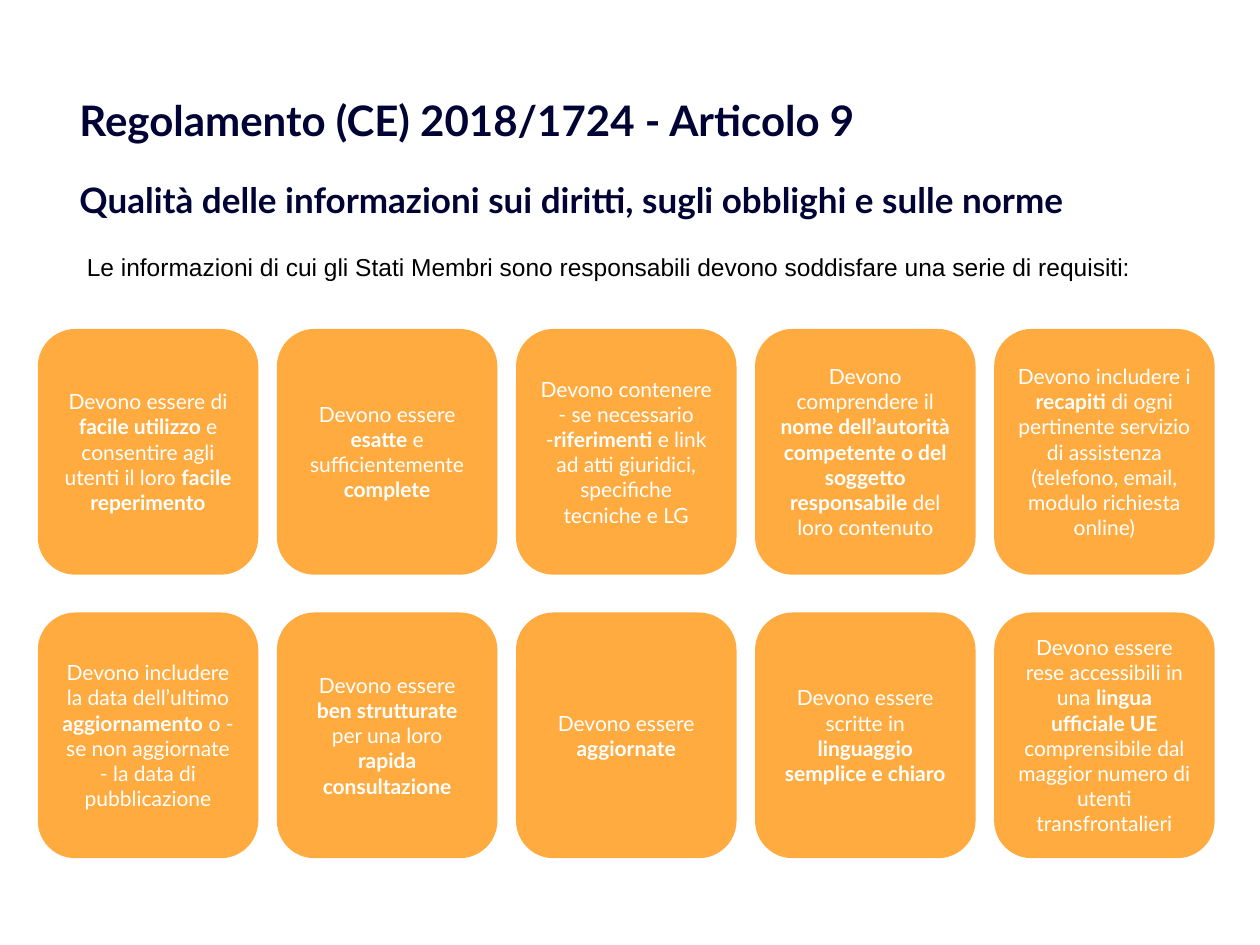
import pptx
import pptx.dml.color
import pptx.enum.shapes
import pptx.enum.text
import pptx.util

Pt = pptx.util.Pt
RGBColor = pptx.dml.color.RGBColor
PP_ALIGN = pptx.enum.text.PP_ALIGN
MSO_ANCHOR = pptx.enum.text.MSO_ANCHOR

NAVY = RGBColor(0x01, 0x03, 0x35)
BLACK = RGBColor(0x00, 0x00, 0x00)
WHITE = RGBColor(0xFF, 0xFF, 0xFF)
ORANGE = RGBColor(0xFF, 0xAB, 0x40)

TITLE = "Regolamento (CE) 2018/1724 - Articolo 9"
SUBTITLE = "Qualità delle informazioni sui diritti, sugli obblighi e sulle norme"
INTRO = (
    "Le informazioni di cui gli Stati Membri sono responsabili "
    "devono soddisfare una serie di requisiti:"
)
REQUIREMENTS = [
    [
        ["Devono essere di ", "facile utilizzo ", "e consentire agli utenti il loro ",
         "facile reperimento"],
        ["Devono essere ", "esatte", " e sufficientemente ", "complete"],
        ["Devono contenere - se necessario -", "riferimenti",
         " e link ad atti giuridici, specifiche tecniche e LG"],
        ["Devono comprendere il ",
         "nome dell’autorità competente o del soggetto responsabile ",
         "del loro contenuto"],
        ["Devono includere i ", "recapiti",
         " di ogni pertinente servizio di assistenza "
         "(telefono, email, modulo richiesta online)"],
    ],
    [
        ["Devono includere la data dell’ultimo ", "aggiornamento",
         " o - se non aggiornate - la data di pubblicazione"],
        ["Devono essere ", "ben strutturate", " per una loro ", "rapida consultazione"],
        ["Devono essere ", "aggiornate"],
        ["Devono essere scritte in ", "linguaggio semplice e chiaro"],
        ["Devono essere rese accessibili in una ", "lingua ufficiale UE ",
         "comprensibile dal maggior numero di utenti transfrontalieri"],
    ],
]


def format_run(r, font, size, color, bold):
    """Set the font of one run."""
    r.font.name = font
    r.font.size = Pt(size)
    r.font.color.rgb = color
    r.font.bold = bold


def set_frame(tf, anchor, inset_x, inset_y):
    """Set wrapping, anchor and insets of a text frame."""
    tf.word_wrap = True
    tf.vertical_anchor = anchor
    tf.margin_left = tf.margin_right = Pt(inset_x)
    tf.margin_top = tf.margin_bottom = Pt(inset_y)


def add_heading(s, box, text, size):
    """Place a bold navy heading in the box."""
    tf = s.shapes.add_textbox(*map(Pt, box)).text_frame
    set_frame(tf, MSO_ANCHOR.MIDDLE, 2.88, 2.88)
    tf.text = text
    format_run(tf.paragraphs[0].runs[0], "Lato", size, NAVY, True)


def add_intro(s, box):
    """Place the introductory sentence in the box."""
    tf = s.shapes.add_textbox(*map(Pt, box)).text_frame
    set_frame(tf, MSO_ANCHOR.TOP, 7.2, 3.6)
    tf.text = INTRO
    format_run(tf.paragraphs[0].runs[0], "Arial", 14, BLACK, False)


def add_card(s, box, parts):
    """Place a rounded card whose text parts alternate regular and bold."""
    sp = s.shapes.add_shape(
        pptx.enum.shapes.MSO_SHAPE.ROUNDED_RECTANGLE, *map(Pt, box))
    sp.adjustments[0] = 0.17
    sp.shadow.inherit = False
    sp.fill.solid()
    sp.fill.fore_color.rgb = ORANGE
    sp.line.fill.background()
    set_frame(sp.text_frame, MSO_ANCHOR.MIDDLE, 7.2, 3.6)
    p = sp.text_frame.paragraphs[0]
    p.alignment = PP_ALIGN.CENTER
    for i, part in enumerate(parts):
        r = p.add_run()
        r.text = part
        format_run(r, "Lato", 12, WHITE, i % 2 == 1)


def add_card_grid(s, box, card_width, card_height):
    """Spread the requirement cards evenly over the box."""
    left, top, width, height = box
    step_x = (width - card_width) / (len(REQUIREMENTS[0]) - 1)
    step_y = (height - card_height) / (len(REQUIREMENTS) - 1)
    for i, row in enumerate(REQUIREMENTS):
        for j, parts in enumerate(row):
            card = (left + j * step_x, top + i * step_y, card_width, card_height)
            add_card(s, card, parts)


def main():
    """Build and save the slide."""
    prs = pptx.Presentation()
    prs.slide_width, prs.slide_height = Pt(720), Pt(540)
    s = prs.slides.add_slide(prs.slide_layouts[6])
    add_heading(s, (42.5, 45.4, 578, 46), TITLE, 24)
    add_heading(s, (42.5, 94.3, 578, 39.6), SUBTITLE, 20)
    add_intro(s, (42.5, 140.4, 641, 32.4))
    add_card_grid(s, (21.6, 188, 672.5, 302.4), 126, 140.4)
    prs.save("out.pptx")


if __name__ == "__main__":
    main()
